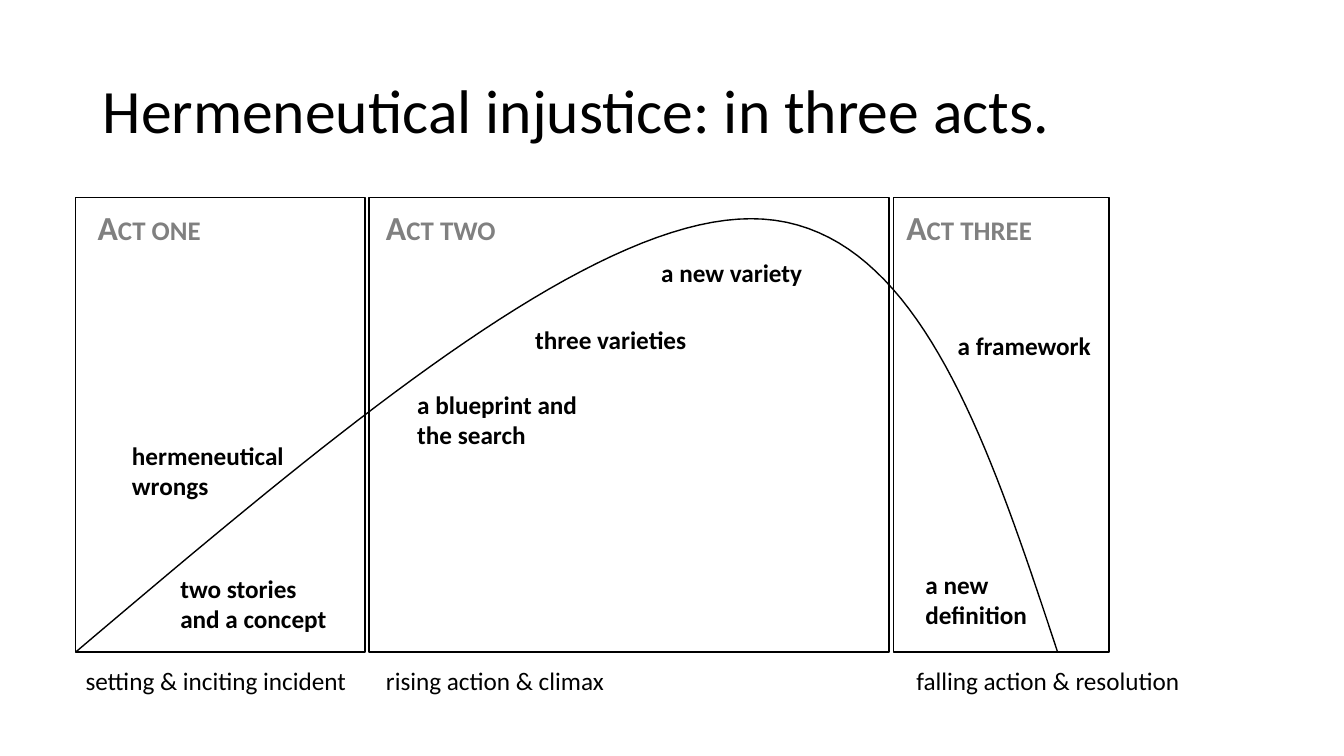
from dataclasses import dataclass

from pptx import Presentation
from pptx.dml.color import RGBColor
from pptx.enum.shapes import MSO_SHAPE
from pptx.enum.text import MSO_ANCHOR
from pptx.util import Inches, Pt

TITLE = ("Hermeneutical injustice: in three acts.", 0.92, 0.4, 11.5, 1.45)

ACTS = [
    {"name": ("Act one", 0.87, 1.24), "width": 2.87,
     "stage": ("setting & inciting incident", 0.75, 2.84)},
    {"name": ("Act two", 3.73, 1.48), "width": 5.16,
     "stage": ("rising action & climax", 3.73, 3.49)},
    {"name": ("Act three", 8.89, 1.49), "width": 2.14,
     "stage": ("falling action & resolution", 8.99, 2.82)},
]

BEATS = [
    ("two stories\nand a concept", 1.69, 5.64, 1.7, 0.71),
    ("hermeneutical wrongs", 1.21, 4.32, 2.11, 0.71),
    ("a blueprint and the search", 4.04, 3.81, 1.83, 0.71),
    ("three varieties", 5.21, 3.17, 1.73, 0.4),
    ("a new variety", 6.46, 2.5, 1.67, 0.4),
    ("a framework", 9.4, 3.23, 1.53, 0.4),
    ("a new definition", 9.08, 5.6, 1.28, 0.71),
]

STORY_ARC = [
    ((0.75, 6.47), (3.29, 4.32), (5.82, 2.17), (7.45, 2.17)),
    ((7.45, 2.17), (9.07, 2.17), (9.78, 4.32), (10.49, 6.47)),
]

ACTS_LEFT, ACTS_TOP, ACTS_HEIGHT, ACTS_GAP = 0.75, 1.96, 4.51, 0.04
NAME_TOP, NAME_HEIGHT = 2, 0.5
STAGE_TOP, STAGE_HEIGHT = 6.55, 0.4
ARC_STEPS = 40


@dataclass(frozen=True)
class Theme:
    font: str = "Calibri"
    ink: RGBColor = RGBColor(0, 0, 0)
    muted: RGBColor = RGBColor(128, 128, 128)
    title: Pt = Pt(44)
    act: Pt = Pt(24)
    body: Pt = Pt(18)
    line: Pt = Pt(1)


THEME = Theme()


def add_text(slide, text, left, top, width, height, size=THEME.body,
             color=THEME.ink, bold=False, small_caps=False):
    label = slide.shapes.add_textbox(*map(Inches, (left, top, width, height)))
    label.text_frame.word_wrap = True
    label.text_frame.text = text
    for paragraph in label.text_frame.paragraphs:
        for run in paragraph.runs:
            values = {"name": THEME.font, "size": size, "bold": bold}
            for attribute, value in values.items():
                setattr(run.font, attribute, value)
            run.font.color.rgb = color
            if small_caps:
                run._r.get_or_add_rPr().set("cap", "small")
    return label.text_frame


def outline(shape):
    shape.shadow.inherit = False
    shape.fill.background()
    shape.line.color.rgb = THEME.ink
    shape.line.width = THEME.line


def curve_point(curve, t):
    weights = ((1 - t) ** 3, 3 * t * (1 - t) ** 2, 3 * t ** 2 * (1 - t), t ** 3)
    return tuple(Inches(sum(w * p[axis] for w, p in zip(weights, curve)))
                 for axis in (0, 1))


def add_acts(slide):
    act_left = ACTS_LEFT
    for act in ACTS:
        frame = slide.shapes.add_shape(MSO_SHAPE.RECTANGLE, *map(
            Inches, (act_left, ACTS_TOP, act["width"], ACTS_HEIGHT)))
        outline(frame)
        act_left += act["width"] + ACTS_GAP
        name, name_left, name_width = act["name"]
        add_text(slide, name, name_left, NAME_TOP, name_width, NAME_HEIGHT,
                 THEME.act, THEME.muted, bold=True, small_caps=True)
        stage, stage_left, stage_width = act["stage"]
        add_text(slide, stage, stage_left, STAGE_TOP, stage_width, STAGE_HEIGHT)


def add_story_arc(slide):
    start = curve_point(STORY_ARC[0], 0)
    points = [curve_point(curve, step / ARC_STEPS)
              for curve in STORY_ARC for step in range(1, ARC_STEPS + 1)]
    arc = slide.shapes.build_freeform(*start)
    arc.add_line_segments(points, close=False)
    outline(arc.convert_to_shape())


def main():
    deck = Presentation()
    deck.slide_width, deck.slide_height = Inches(13.33), Inches(7.5)
    slide = deck.slides.add_slide(deck.slide_layouts[6])
    title = add_text(slide, *TITLE, size=THEME.title)
    title.vertical_anchor = MSO_ANCHOR.MIDDLE
    title.paragraphs[0].line_spacing = 0.9
    add_acts(slide)
    add_story_arc(slide)
    for beat in BEATS:
        add_text(slide, *beat, bold=True)
    deck.save("out.pptx")


if __name__ == "__main__":
    main()
